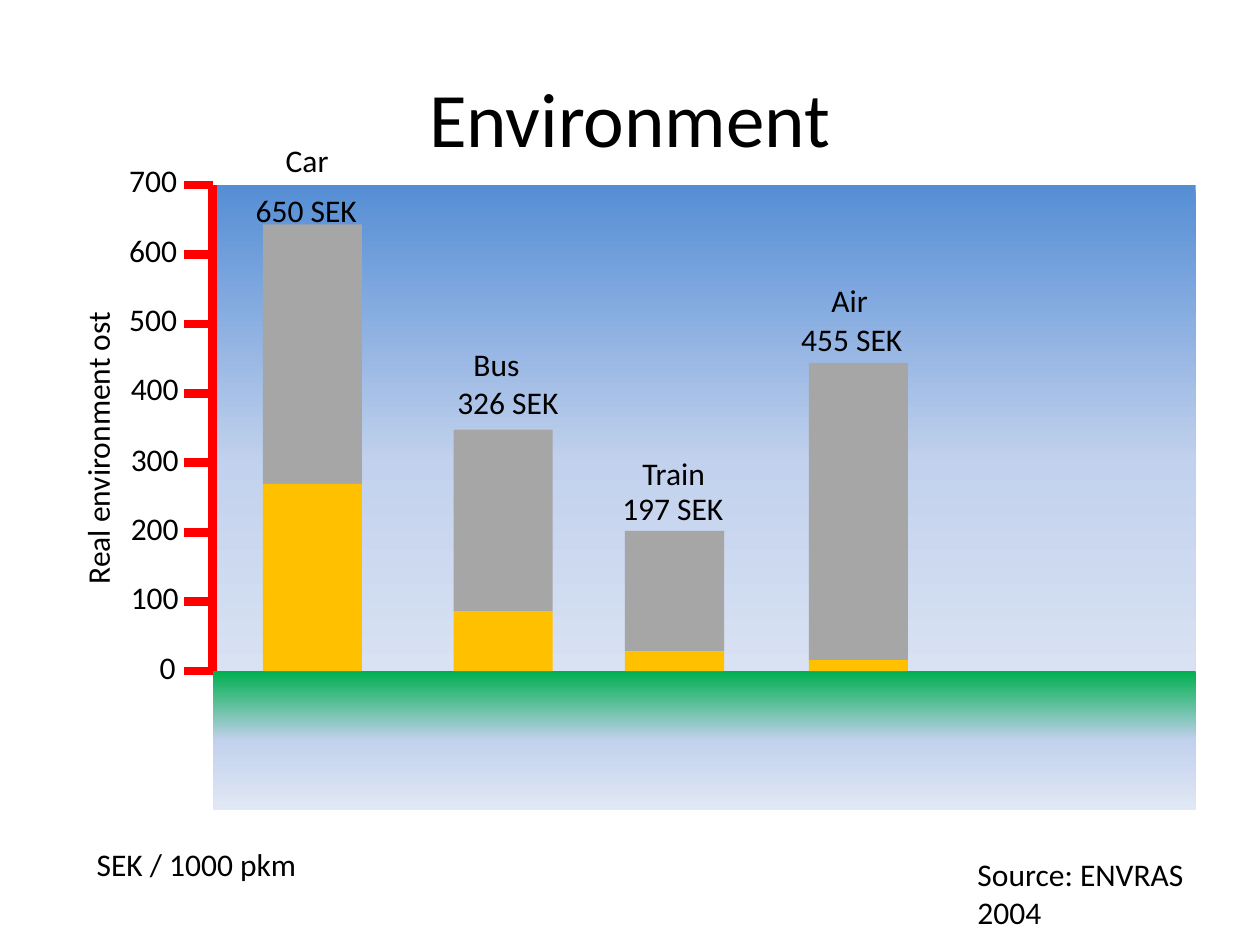
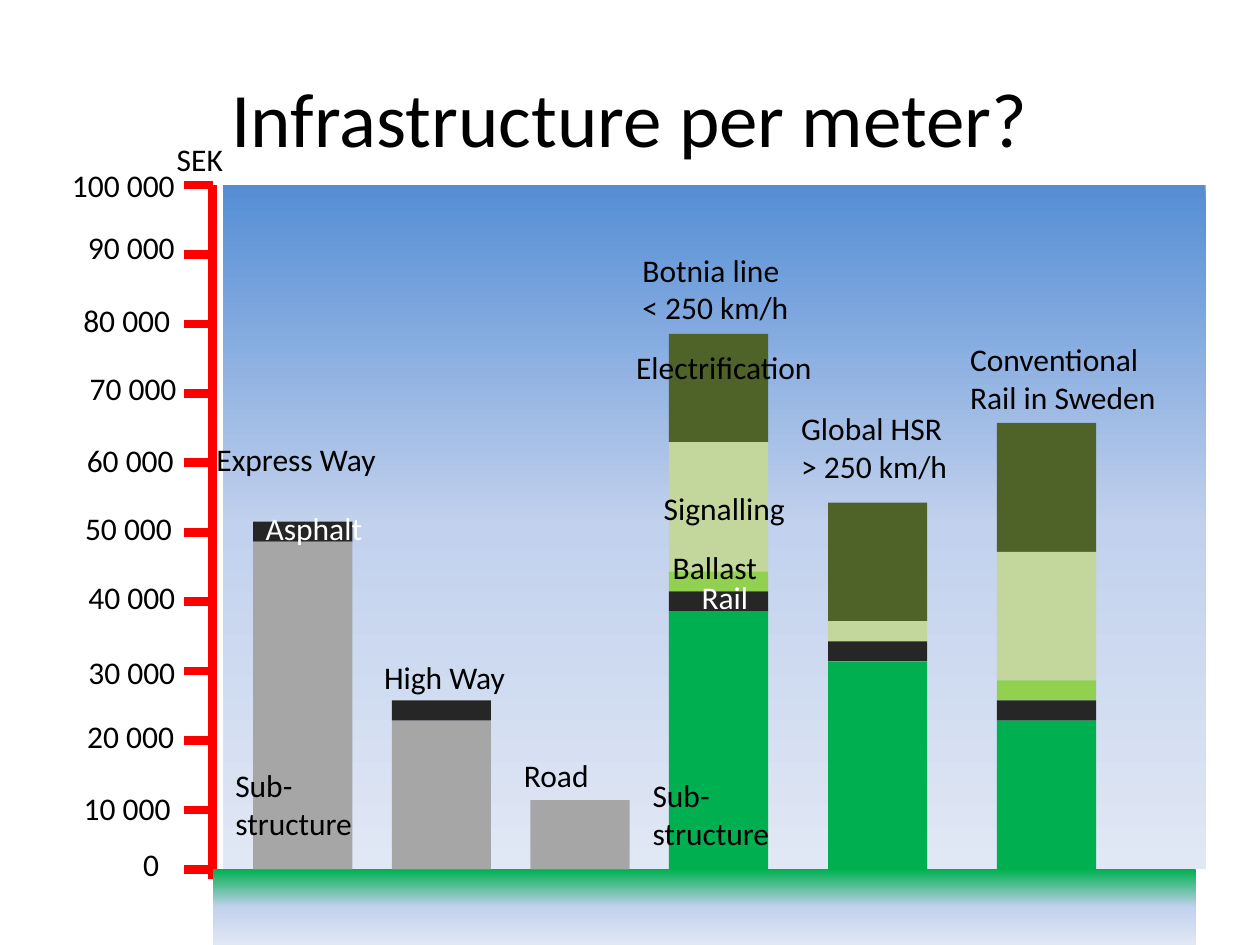
from copy import deepcopy

from lxml import etree
from pptx import Presentation
from pptx.dml.color import RGBColor
from pptx.enum.shapes import MSO_CONNECTOR, MSO_SHAPE
from pptx.enum.text import MSO_ANCHOR, PP_ALIGN
from pptx.oxml.ns import qn
from pptx.util import Pt

RECT = MSO_SHAPE.RECTANGLE
LINE = MSO_CONNECTOR.STRAIGHT
LEFT, MID, RIGHT = PP_ALIGN.LEFT, PP_ALIGN.CENTER, PP_ALIGN.RIGHT

INK = {
    "black": "000000", "white": "FFFFFF", "red": "FF0000",
    "sky": "558ED5", "haze": "C2D1ED", "mist": "E1E8F5",
    "grass": "00B050", "grey": "A6A6A6", "gold": "FFC000",
    "coal": "262626", "moss": "4F6228", "sage": "C3D69B", "lime": "92D050",
}
FONT = "Calibri"
TOP, STEP = 105.8, 39.67
AXIS, TICK = 121.6, 105.2
BAND, BAR = 561.6, 56.7

# bars: left, then (colour, top) from the top down
# marks: text, right, top
# notes: text, left, top, width, colour
SLIDES = [
    {
        "title": "Environment",
        "sky": (121.6, 317.5),
        "base": 383.6, "ground": 79.2,
        "marks": [
            ("700", 108.3, 88.6), ("600", 108.3, 128.2),
            ("500", 108.3, 167.8), ("400", 109.2, 207.4),
            ("300", 109.2, 247.7), ("200", 109.2, 287.3),
            ("100", 109.2, 326.9), ("0", 107.5, 366.5),
        ],
        "bars": [
            (150.2, [("grey", 128.2), ("gold", 276.5)]),
            (259.2, [("grey", 245.5), ("gold", 349.2)]),
            (357.1, [("grey", 303.4), ("gold", 372.2)]),
            (462.2, [("grey", 207.4), ("gold", 377.3)]),
        ],
        "notes": [
            ("Car", 156.2, 77, 39.6, "black"),
            ("650 SEK", 139, 105.8, 72.7, "black"),
            ("Bus", 263.5, 193.7, 41, "black"),
            ("326 SEK", 254.2, 215.3, 72.7, "black"),
            ("Train", 360, 255.6, 50.4, "black"),
            ("197 SEK", 348.5, 275.8, 72.7, "black"),
            ("Air", 468, 157, 35.3, "black"),
            ("455 SEK", 450.7, 179.3, 72.7, "black"),
            ("SEK / 1000 pkm", 48.2, 479.5, 129.6, "black"),
            ("Source: ENVRAS 2004", 551.5, 485.3, 168.5, "black"),
        ],
        "side": ("Real environment ost", -30.2, 240.5, 172, "black"),
    },
    {
        "title": "Infrastructure per meter?",
        "sky": (127.4, 391),
        "base": 496.8, "ground": 43.2,
        "marks": [
            ("100 000", 107, 91.4), ("90 000", 107, 126.7),
            ("80 000", 104.4, 168.5), ("70 000", 108, 207.4),
            ("60 000", 106.4, 248.4), ("50 000", 105.4, 287.3),
            ("40 000", 107.3, 326.9), ("30 000", 107.3, 369.4),
            ("20 000", 106.6, 406.1), ("10 000", 104.6, 447.1),
            ("0", 98, 479.5),
        ],
        "bars": [
            (144.7, [("coal", 298.1), ("grey", 309.6)]),
            (223.9, [("coal", 400.3), ("grey", 411.8)]),
            (303.1, [("grey", 457.2)]),
            (382.3, [("moss", 190.8), ("sage", 252.7), ("lime", 326.6),
                     ("coal", 337.9), ("grass", 349.2)]),
            (473.2, [("moss", 287.3), ("sage", 355), ("coal", 366.5),
                     ("grass", 377.9)]),
            (569.7, [("moss", 241.7), ("sage", 315.4), ("lime", 388.8),
                     ("coal", 400.3), ("grass", 411.8)]),
        ],
        "notes": [
            ("SEK", 93.9, 76.3, 42.2, "black"),
            ("Express Way", 116.6, 247.7, 106.6, "black"),
            ("Asphalt", 144.7, 287.3, 70.6, "white"),
            ("Sub-\nstructure", 127.4, 434.2, 82.1, "black"),
            ("High Way", 212.4, 372.2, 84.2, "black"),
            ("Road", 292.3, 428.4, 51.8, "black"),
            ("Botnia line\n< 250 km/h", 360, 139.7, 99.4, "black"),
            ("Electrification", 356.4, 195.1, 115.9, "black"),
            ("Signalling", 372.2, 275.8, 84.2, "black"),
            ("Ballast", 377.3, 309.6, 63.4, "black"),
            ("Rail", 393.8, 326.9, 41.8, "white"),
            ("Sub-\nstructure", 365.8, 439.9, 82.1, "black"),
            ("Global HSR\n> 250 km/h", 450.7, 230.4, 101.5, "black"),
            ("Conventional\nRail in Sweden", 547.2, 190.8, 121.7, "black"),
        ],
    },
]


def tint(name):
    return RGBColor.from_string(INK[name])


def write(page, text, left, top, width, ink="black", align=LEFT, size=18, high=None):
    rows = text.split("\n")
    high = high or 29 + 22 * (len(rows) - 1)
    box = page.shapes.add_textbox(Pt(left), Pt(top), Pt(width), Pt(high))
    frame = box.text_frame
    frame.text = text
    frame.word_wrap = False
    if size > 18:
        frame.vertical_anchor = MSO_ANCHOR.MIDDLE
    for para in frame.paragraphs:
        para.alignment = align
        para.font.name = FONT
        para.font.size = Pt(size)
        para.font.color.rgb = tint(ink)
    return box


def block(page, left, top, width, high, *inks):
    rect = page.shapes.add_shape(RECT, Pt(left), Pt(top), Pt(width), Pt(high))
    rect.shadow.inherit = False
    rect.line.fill.background()
    if len(inks) == 1:
        rect.fill.solid()
        rect.fill.fore_color.rgb = tint(inks[0])
        return
    rect.fill.gradient()
    rect.fill.gradient_angle = 270
    stops = rect._element.spPr.find(".//" + qn("a:gsLst"))
    stops.insert(1, deepcopy(stops[0]))
    for i, (stop, ink) in enumerate(zip(rect.fill.gradient_stops, inks)):
        stop.position = i / (len(inks) - 1)
        stop.color.rgb = tint(ink)


def rule(page, x1, y1, x2, y2):
    line = page.shapes.add_connector(LINE, Pt(x1), Pt(y1), Pt(x2), Pt(y2))
    line.line.color.rgb = tint("red")
    line.line.width = Pt(5)
    etree.SubElement(line._element.spPr, qn("a:effectLst"))


def draw(page, data):
    base = data["base"]
    write(page, data["title"], 36, 21.6, 648, align=MID, size=44, high=90)
    left, high = data["sky"]
    block(page, left, TOP, BAND, high, "sky", "haze", "mist")
    rule(page, AXIS, TOP, AXIS, TOP + STEP * (len(data["marks"]) - 1))
    block(page, AXIS, base, BAND, data["ground"], "grass", "haze", "mist")
    for i, (text, right, top) in enumerate(data["marks"]):
        y = min(TOP + STEP * i, base)
        rule(page, AXIS, y, TICK, y)
        write(page, text, right - 75, top, 75, align=RIGHT)
    for left, parts in data["bars"]:
        ends = [top for _, top in parts[1:]] + [base]
        for (ink, top), end in zip(parts, ends):
            block(page, left, top, BAR, end - top, ink)
    for note in data["notes"]:
        write(page, *note)
    if "side" in data:
        write(page, *data["side"]).rotation = 270


def main():
    deck = Presentation()
    deck.slide_width, deck.slide_height = Pt(720), Pt(540)
    for data in SLIDES:
        draw(deck.slides.add_slide(deck.slide_layouts[6]), data)
    deck.save("out.pptx")


if __name__ == "__main__":
    main()
